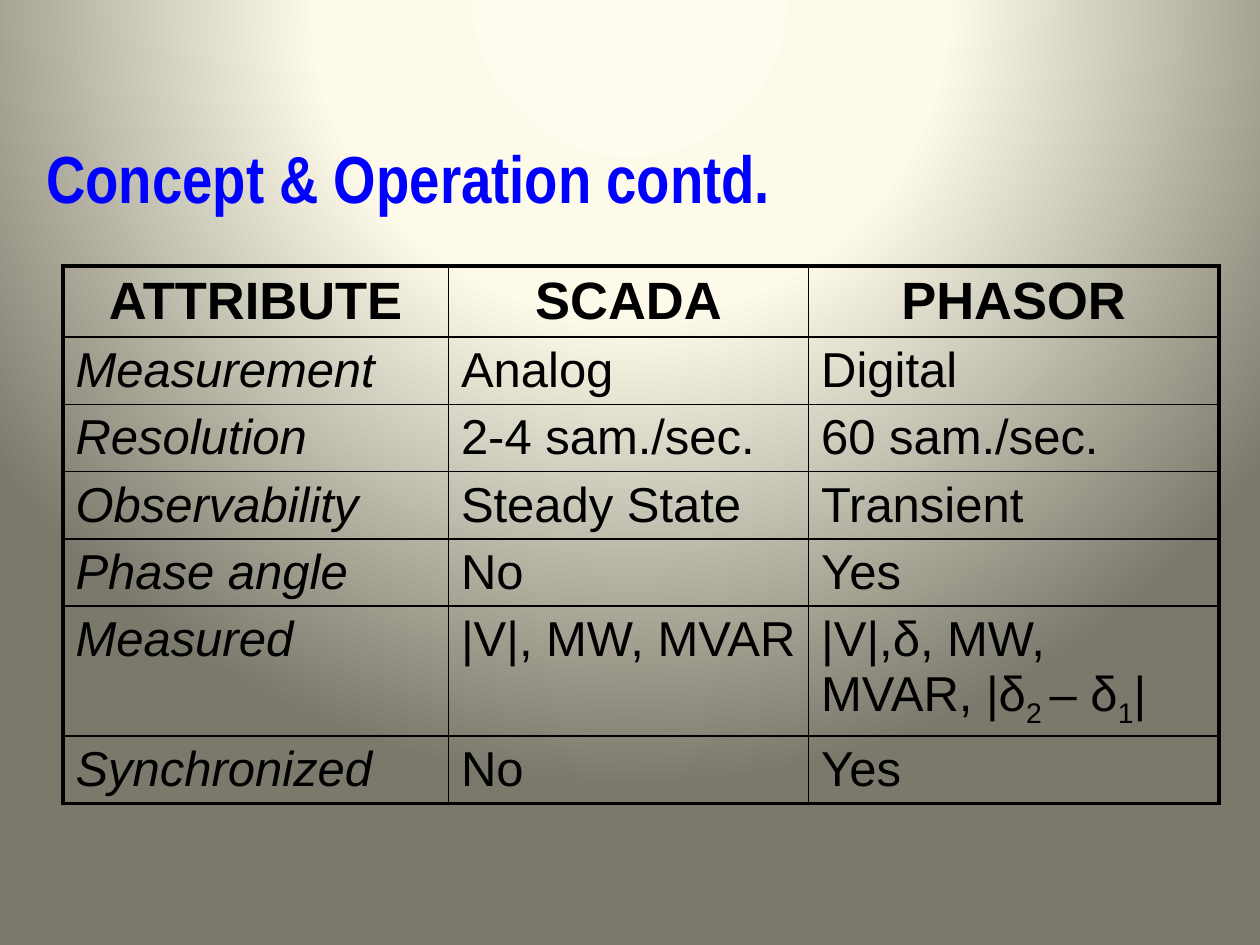
from pptx import Presentation
from pptx.dml.color import RGBColor
from pptx.enum.text import MSO_ANCHOR, PP_ALIGN
from pptx.oxml import parse_xml
from pptx.oxml.ns import nsdecls
from pptx.util import Cm, Pt

# Content: a cell is plain text, or a list of (text, is subscript)
TITLE = "Concept & Operation contd."
ROWS = [
    ("ATTRIBUTE", "SCADA", "PHASOR"),
    ("Measurement", "Analog", "Digital"),
    ("Resolution", "2-4 sam./sec.", "60 sam./sec."),
    ("Observability", "Steady State", "Transient"),
    ("Phase angle", "No", "Yes"),
    ("Measured", "|V|, MW, MVAR",
     [("|V|,δ, MW, MVAR, |δ", False), ("2 ", True), ("– δ", False),
      ("1", True), ("|", False)]),
    ("Synchronized", "No", "Yes"),
]

THEME = {
    "title": ("Arial Narrow", 38, "0000FF"),
    "head": ("Arial", 30, "000000"),
    "body": ("Arial", 28, "000000"),
    "line": "000000",
    "outer": 2.25,
    "inner": 1,
    "stops": [(0, "FEFCEE"), (40, "FDFAEA"), (100, "7B796B")],
}

# Layout in centimetres
TITLE_BOX = (0.2, 2.46, 16.08, 2.21)
GRID_BOX = (1.27, 5.36, 23.3, 11.35)
WIDTHS = (7.77, 7.26, 8.27)
HEIGHTS = (1.02, 1.09, 1.09, 1.12, 1.09, 1.88, 1.09)


def style(run, kind, bold=False, italic=False):
    name, size, color = THEME[kind]
    font = run.font
    font.name, font.size = name, Pt(size)
    font.bold, font.italic = bold, italic
    font.color.rgb = RGBColor.from_string(color)


def paint(slide):
    stops = "".join(
        f'<a:gs pos="{pos * 1000}"><a:srgbClr val="{color}"/></a:gs>'
        for pos, color in THEME["stops"])
    slide.element.cSld.insert(0, parse_xml(
        f'<p:bg {nsdecls("p", "a")}><p:bgPr><a:gradFill rotWithShape="1">'
        f'<a:gsLst>{stops}</a:gsLst><a:path path="circle">'
        '<a:fillToRect l="50000" t="-80000" r="50000" b="180000"/></a:path>'
        '</a:gradFill><a:effectLst/></p:bgPr></p:bg>'))


def frame(cell, row, col):
    # The rim of the table is heavier than the inner rules
    rim = {"L": col == 0, "R": col == len(WIDTHS) - 1,
           "T": row == 0, "B": row == len(ROWS) - 1}
    props = cell._tc.get_or_add_tcPr()
    for side, outer in rim.items():
        width = Pt(THEME["outer" if outer else "inner"])
        props.append(parse_xml(
            f'<a:ln{side} {nsdecls("a")} w="{width}"><a:solidFill>'
            f'<a:srgbClr val="{THEME["line"]}"/></a:solidFill></a:ln{side}>'))
    cell.fill.background()


def write(cell, value, row, col):
    para = cell.text_frame.paragraphs[0]
    head = row == 0
    para.alignment = PP_ALIGN.CENTER if head else PP_ALIGN.LEFT
    parts = [(value, False)] if isinstance(value, str) else value
    for text, sub in parts:
        run = para.add_run()
        run.text = text
        style(run, "head" if head else "body", head, col == 0 and not head)
        if sub:
            run._r.get_or_add_rPr().set("baseline", "-25000")


def main():
    deck = Presentation()
    deck.slide_width, deck.slide_height = Cm(25.4), Cm(19.05)
    slide = deck.slides.add_slide(deck.slide_layouts[5])
    paint(slide)

    # Title
    title = slide.shapes.title
    title.left, title.top, title.width, title.height = map(Cm, TITLE_BOX)
    title.text_frame.text = TITLE
    title.text_frame.vertical_anchor = MSO_ANCHOR.MIDDLE
    para = title.text_frame.paragraphs[0]
    para.alignment = PP_ALIGN.CENTER
    style(para.runs[0], "title", bold=True)

    # Comparison table
    shape = slide.shapes.add_table(len(ROWS), len(WIDTHS), *map(Cm, GRID_BOX))
    table = shape.table
    table.first_row = table.horz_banding = False
    for col, width in zip(table.columns, WIDTHS):
        col.width = Cm(width)
    for row, height in zip(table.rows, HEIGHTS):
        row.height = Cm(height)
    shape.height = Cm(GRID_BOX[3])
    for r, values in enumerate(ROWS):
        for c, value in enumerate(values):
            cell = table.cell(r, c)
            frame(cell, r, c)
            write(cell, value, r, c)

    deck.save("out.pptx")


if __name__ == "__main__":
    main()
